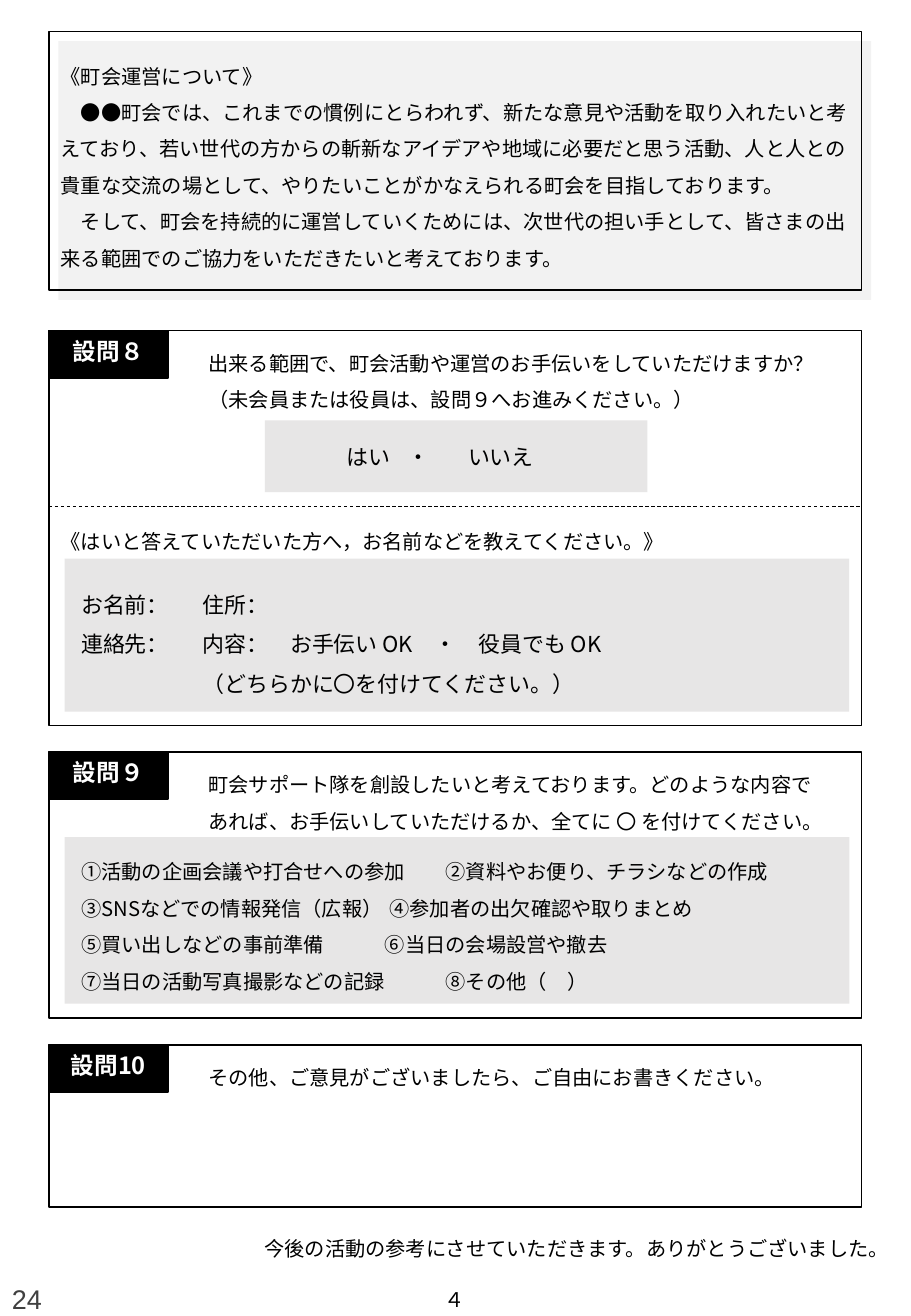
import pptx
import pptx.util
import pptx.dml.color
import pptx.enum.dml
import pptx.enum.shapes
import pptx.enum.text
import pptx.oxml.ns
from lxml import etree
from pptx.util import Cm, Pt

ALIGN = pptx.enum.text.PP_ALIGN
ANCHOR = pptx.enum.text.MSO_ANCHOR
FIT = pptx.enum.text.MSO_AUTO_SIZE
JP = "Noto Sans CJK JP"
BLACK, WHITE, ANSWER, SHADE = "000000", "FFFFFF", "E7E6E6", "F2F2F2"
FRAME_X, FRAME_W = 1.02, 17.0
PANEL_X, PANEL_W = 1.35, 16.41


def rgb(value):
    return pptx.dml.color.RGBColor.from_string(value)


def sub(parent, tag, **attrs):
    return etree.SubElement(parent, pptx.oxml.ns.qn(tag), **attrs)


class Form:
    """Questionnaire page: shared style plus the slide being filled."""

    def __init__(self, slide):
        self.s = slide

    def set_text(self, sp, lines, size=12, color=BLACK, bold=False, font=JP,
                 align=ALIGN.LEFT, anchor=ANCHOR.TOP, spacing=(1.5,), tabs=(),
                 left=0.25, top=0.13, wrap=True):
        """Fill sp with lines; tabs are in ems, the last spacing value repeats."""
        tf = sp.text_frame
        tf.word_wrap = wrap
        tf.auto_size = FIT.NONE if wrap else FIT.SHAPE_TO_FIT_TEXT
        tf.vertical_anchor = anchor
        tf.margin_left, tf.margin_right = Cm(left), Cm(0.25)
        tf.margin_top, tf.margin_bottom = Cm(top), Cm(0.13)
        for i, line in enumerate(lines):
            p = tf.add_paragraph() if i else tf.paragraphs[0]
            p.text = line
            p.alignment = align
            p.line_spacing = spacing[min(i, len(spacing) - 1)]
            p.space_before = Pt(0)
            pPr = p._p.get_or_add_pPr()
            pPr.set("marL", "0")
            pPr.set("indent", "0")
            sub(pPr, "a:buNone")
            if tabs:
                stops = sub(pPr, "a:tabLst")
                for em in tabs:
                    sub(stops, "a:tab", pos=str(int(Pt(em * size))), algn="l")
            p.font.size, p.font.bold, p.font.name = Pt(size), bold, font
            p.font.color.rgb = rgb(color)
            sub(p.font._element, "a:ea", typeface=font)

    def box(self, x, y, w, h, fill=None, line=None, lines=(), **style):
        sp = self.s.shapes.add_shape(pptx.enum.shapes.MSO_SHAPE.RECTANGLE,
                                     Cm(x), Cm(y), Cm(w), Cm(h))
        sp.shadow.inherit = False
        if fill:
            sp.fill.solid()
            sp.fill.fore_color.rgb = rgb(fill)
        else:
            sp.fill.background()
        if line:
            sp.line.color.rgb = rgb(line)
            sp.line.width = Pt(1)
        else:
            sp.line.fill.background()
        if lines:
            self.set_text(sp, lines, **style)

    def text(self, x, y, w, h, lines, wrap=False, **style):
        sp = self.s.shapes.add_textbox(Cm(x), Cm(y), Cm(w), Cm(h))
        self.set_text(sp, lines, wrap=wrap, **style)

    def placeholder(self, idx, x, y, w, h, lines, fill=None, **style):
        """Move a template placeholder to the front and fill it."""
        sp = self.s.placeholders[idx]
        sp._element.getparent().append(sp._element)
        sp.left, sp.top, sp.width, sp.height = Cm(x), Cm(y), Cm(w), Cm(h)
        if fill:
            sp.fill.solid()
            sp.fill.fore_color.rgb = rgb(fill)
        self.set_text(sp, lines, **style)

    def dashed_line(self, x, y, w):
        c = self.s.shapes.add_connector(pptx.enum.shapes.MSO_CONNECTOR.STRAIGHT,
                                        Cm(x), Cm(y), Cm(x + w), Cm(y))
        c.line.color.rgb = rgb(BLACK)
        c.line.width = Pt(0.5)
        c.line.dash_style = pptx.enum.dml.MSO_LINE.DASH
        sub(c._element.spPr, "a:effectLst")

    def question(self, y, h, tag, lines, w):
        """Framed block with a black number tag and the question text."""
        self.box(FRAME_X, y, FRAME_W, h, line=BLACK)
        self.box(FRAME_X, y, 2.49, 0.99, BLACK, BLACK, [tag], size=14,
                 color=WHITE, bold=True, align=ALIGN.CENTER, spacing=(1.0,))
        self.text(4.11, y + 0.05, w, 0.15 + 0.76 * len(lines), lines)


def main():
    prs = pptx.Presentation()
    prs.slide_width, prs.slide_height = Cm(19.05), Cm(27.51)
    form = Form(prs.slides.add_slide(prs.slide_layouts[1]))

    form.box(1.22, 0.86, FRAME_W, 5.41, SHADE)
    form.box(FRAME_X, 0.66, FRAME_W, 5.41, line=BLACK, anchor=ANCHOR.MIDDLE,
             top=0.89, lines=[
        "　●●町会では、これまでの慣例にとらわれず、新たな意見や活動を取り入れたいと考えており、"
        "若い世代の方からの斬新なアイデアや地域に必要だと思う活動、人と人との貴重な交流の場として、"
        "やりたいことがかなえられる町会を目指しております。",
        "　そして、町会を持続的に運営していくためには、次世代の担い手として、"
        "皆さまの出来る範囲でのご協力をいただきたいと考えております。"])
    form.placeholder(0, FRAME_X, 0.95, FRAME_W, 1.0, ["《町会運営について》"])

    form.question(6.91, 8.26, "設問８", [
        "出来る範囲で、町会活動や運営のお手伝いをしていただけますか？",
        "（未会員または役員は、設問９へお進みください。）"], 13.34)
    form.dashed_line(FRAME_X, 10.59, FRAME_W)
    form.box(5.54, 8.79, 8.0, 1.5, ANSWER, lines=["はい\t・\tいいえ"], size=13,
             anchor=ANCHOR.MIDDLE, spacing=(1.0,), left=1.71, tabs=(4, 7))
    form.text(FRAME_X, 10.69, 13.34, 0.89,
              ["《はいと答えていただいた方へ，お名前などを教えてください。》"])
    form.box(PANEL_X, 11.68, PANEL_W, 3.2, ANSWER, size=13, left=0.35,
             spacing=(2.0, 1.5), tabs=(14, 17.2), lines=[
        "お名前：\t住所：",
        "連絡先：\t内容：　お手伝い OK　・　役員でも OK",
        "\t\t（どちらかに〇を付けてください。）"])

    form.question(15.72, 5.56, "設問９", [
        "町会サポート隊を創設したいと考えております。どのような内容で",
        "あれば、お手伝いしていただけるか、全てに 〇 を付けてください。"], 13.77)
    form.placeholder(1, PANEL_X, 17.5, PANEL_W, 3.48, [
        "①活動の企画会議や打合せへの参加\t②資料やお便り、チラシなどの作成",
        "③SNSなどでの情報発信（広報）\t ④参加者の出欠確認や取りまとめ",
        "⑤買い出しなどの事前準備\t⑥当日の会場設営や撤去",
        "⑦当日の活動写真撮影などの記録\t⑧その他（\t）"],
        fill=ANSWER, anchor=ANCHOR.MIDDLE, left=0.35, tabs=(18, 36))

    form.question(21.84, 3.4, "設問10",
                  ["その他、ご意見がございましたら、ご自由にお書きください。"], 12.47)

    form.text(5.28, 25.45, 13.77, 0.89,
              ["今後の活動の参考にさせていただきます。ありがとうございました。"])
    form.text(9.04, 26.77, 0.94, 0.76, ["４"], spacing=(1.0,))
    form.text(0, 26.77, 1.37, 0.74, ["24"], wrap=True, size=16, font="Arial",
              color="404040", anchor=ANCHOR.MIDDLE, spacing=(1.0,))

    prs.save("out.pptx")


if __name__ == "__main__":
    main()
